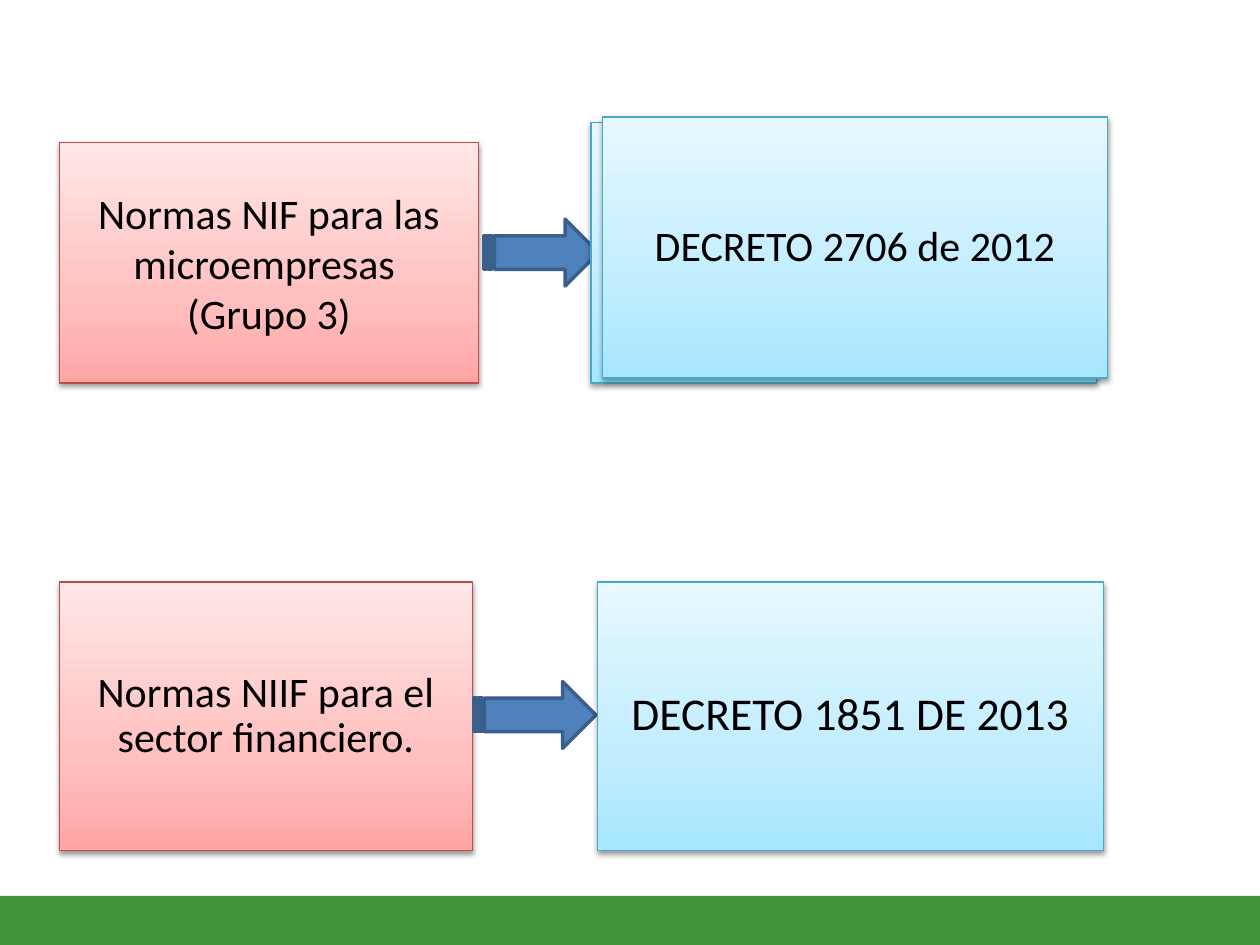
from lxml import etree
from pptx import Presentation
from pptx.dml.color import RGBColor
from pptx.enum import shapes, text
from pptx.oxml.ns import qn
from pptx.util import Inches, Pt

COLORS = {
    "band": "439539",
    "arrow": "4F81BD",
    "arrow_line": "3A5F8C",
    "red_line": "BF4C48",
    "blue_line": "46AAC5",
    "text": "000000",
}
GRADIENTS = {
    "red": {0: "FFA6A5", 35: "FFC0BF", 100: "FFE7E7"},
    "blue": {0: "A7E6FF", 35: "C1EDFF", 100: "E7F8FF"},
}


def rgb(name):
    return RGBColor.from_string(COLORS[name])


def add_color(parent, value):
    return etree.SubElement(parent, qn("a:srgbClr"), val=value)


class SlideBuilder:
    font = "Calibri"

    def __init__(self, slide):
        self.slide = slide

    def shape(self, kind, box):
        sp = self.slide.shapes.add_shape(kind, *(Inches(v) for v in box))
        sp.shadow.inherit = False
        return sp

    def band(self, box):
        sp = self.shape(shapes.MSO_SHAPE.RECTANGLE, box)
        sp.fill.solid()
        sp.fill.fore_color.rgb = rgb("band")
        sp.line.fill.background()

    def arrow(self, box):
        sp = self.shape(shapes.MSO_SHAPE.STRIPED_RIGHT_ARROW, box)
        sp.fill.solid()
        sp.fill.fore_color.rgb = rgb("arrow")
        sp.line.color.rgb = rgb("arrow_line")
        sp.line.width = Pt(2)

    def gradient(self, sp, stops):
        sp.fill.gradient()
        sp.fill.gradient_angle = 90
        gs_list = next(sp.element.iter(qn("a:gsLst")))
        for gs in list(gs_list):
            gs_list.remove(gs)
        for pos, value in stops.items():
            add_color(etree.SubElement(gs_list, qn("a:gs"), pos=str(pos * 1000)), value)

    def shadow(self, sp):
        effects = next(sp.element.iter(qn("a:effectLst")))
        outer = etree.SubElement(
            effects, qn("a:outerShdw"), blurRad=str(Pt(3.1)), dist=str(Pt(1.6)),
            dir="5400000", rotWithShape="0")
        etree.SubElement(add_color(outer, "000000"), qn("a:alpha"), val="38000")

    def card(self, box, color, lines=(), size=24, spacing=0.9, inset=0.02):
        sp = self.shape(shapes.MSO_SHAPE.RECTANGLE, box)
        self.gradient(sp, GRADIENTS[color])
        sp.line.color.rgb = rgb(color + "_line")
        sp.line.width = Pt(0.75)
        self.shadow(sp)
        tf = sp.text_frame
        tf.word_wrap = True
        tf.vertical_anchor = text.MSO_ANCHOR.MIDDLE
        if inset is not None:
            tf.margin_left = tf.margin_right = Inches(inset)
            tf.margin_top = tf.margin_bottom = Inches(inset)
        for i, line in enumerate(lines):
            p = tf.add_paragraph() if i else tf.paragraphs[0]
            p.alignment = text.PP_ALIGN.CENTER
            p.line_spacing = spacing
            r = p.add_run()
            r.text = line
            r.font.name = self.font
            r.font.size = Pt(size)
            r.font.color.rgb = rgb("text")


def main():
    prs = Presentation()
    prs.slide_width, prs.slide_height = Inches(10), Inches(7.5)
    s = SlideBuilder(prs.slides.add_slide(prs.slide_layouts[6]))

    s.band((0, 7.11, 10, 0.39))

    s.card((0.47, 1.13, 3.33, 1.91), "red",
           ["Normas NIF para las microempresas ", "(Grupo 3)"],
           spacing=1.0, inset=None)
    s.arrow((3.84, 1.74, 0.91, 0.53))
    s.card((4.69, 0.97, 4.01, 2.07), "blue")
    s.card((4.78, 0.93, 4.01, 2.07), "blue", ["DECRETO 2706 de 2012"])

    s.card((0.47, 4.62, 3.28, 2.13), "red", ["Normas NIIF para el sector financiero."])
    s.arrow((3.76, 5.41, 0.97, 0.53))
    s.card((4.74, 4.62, 4.02, 2.13), "blue", ["DECRETO 1851 DE 2013"], size=26)

    prs.save("out.pptx")


if __name__ == "__main__":
    main()
